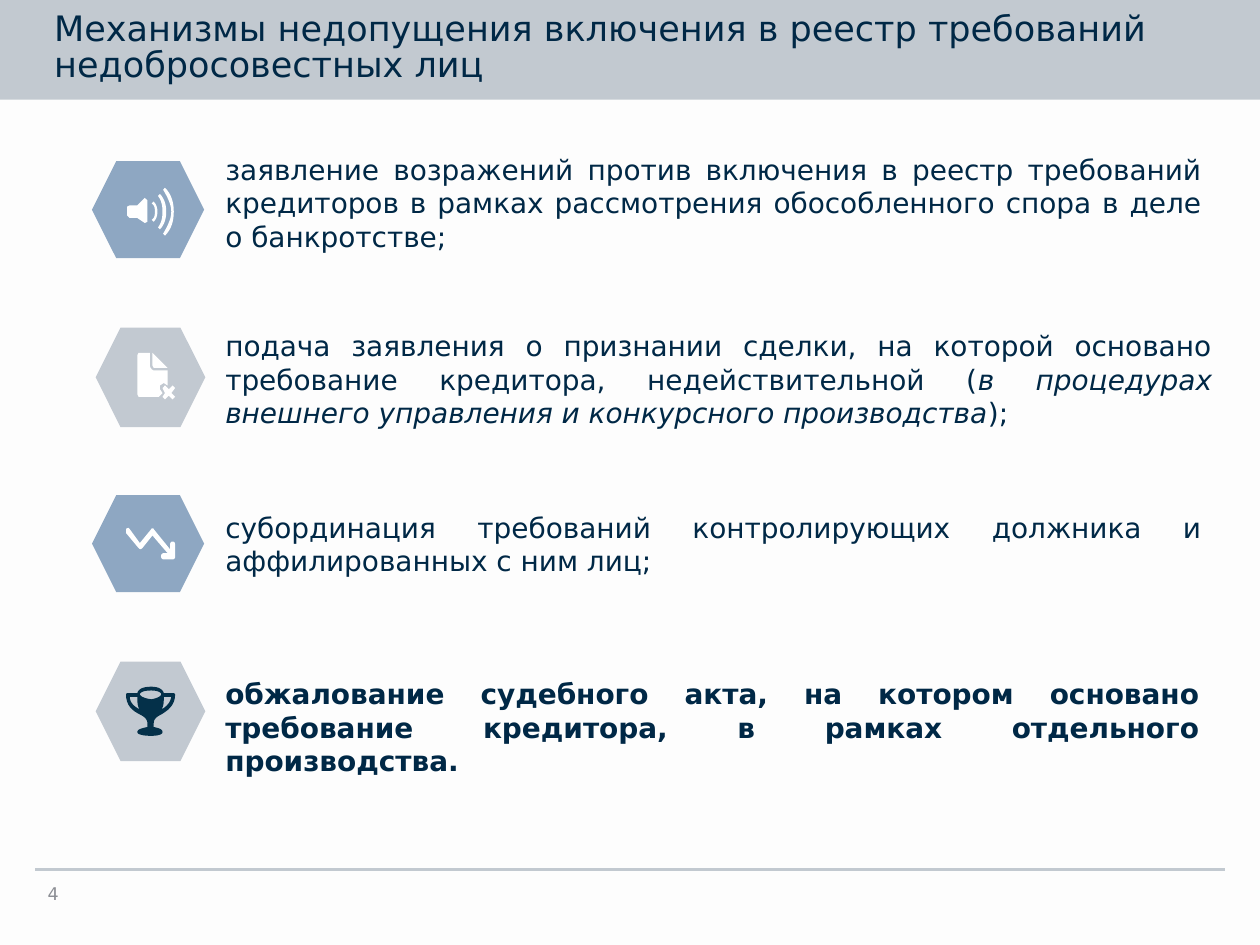
from dataclasses import dataclass

from lxml import etree
from pptx import Presentation
from pptx.dml.color import RGBColor
from pptx.enum.shapes import MSO_CONNECTOR, MSO_SHAPE
from pptx.enum.text import MSO_ANCHOR, MSO_AUTO_SIZE, PP_ALIGN
from pptx.oxml.ns import qn
from pptx.util import Inches, Pt

HEXAGON, RECTANGLE = MSO_SHAPE.HEXAGON, MSO_SHAPE.RECTANGLE
STRAIGHT = MSO_CONNECTOR.STRAIGHT
MIDDLE, TOP = MSO_ANCHOR.MIDDLE, MSO_ANCHOR.TOP
JUSTIFY, LEFT = PP_ALIGN.JUSTIFY, PP_ALIGN.LEFT
GROW = MSO_AUTO_SIZE.SHAPE_TO_FIT_TEXT

FONT = "DejaVu Sans"
COLORS = {
    "background": "FDFDFD", "band": "C2C9D0", "navy": "002846", "number": "8C8E94",
    "blue": "8EA7C2", "gray": "C2C9D1", "white": "FFFFFF", "cup": "043049",
}
CURVE_STEPS = 8

# A contour lists points (x, y) and cubic curves (x1, y1, x2, y2, x, y), in inches
Contour = list[tuple[float, ...]]


@dataclass
class Run:
    text: str
    bold: bool = False
    italic: bool = False


@dataclass
class Item:
    runs: list[Run]
    text_top: float
    text_width: float
    text_height: float
    hexagon: tuple[float, float, float, float]
    hexagon_color: str
    icon: list[Contour]
    icon_color: str = "white"


def rgb(name: str) -> RGBColor:
    return RGBColor.from_string(COLORS[name])


def style_shape(shape, color: str) -> None:
    shape.shadow.inherit = False
    shape.fill.solid()
    shape.fill.fore_color.rgb = rgb(color)
    shape.line.fill.background()


def add_filled_shape(slide, kind, box: tuple[float, ...], color: str) -> None:
    style_shape(slide.shapes.add_shape(kind, *map(Inches, box)), color)


def add_text(slide, box: tuple[float, ...], runs: list[Run], size: int,
             color: str = "navy", anchor=TOP, alignment=LEFT):
    shape = slide.shapes.add_textbox(*map(Inches, box))
    frame = shape.text_frame
    frame.word_wrap = True
    frame.vertical_anchor = anchor
    paragraph = frame.paragraphs[0]
    paragraph.alignment = alignment
    for part in runs:
        run = paragraph.add_run()
        run.text = part.text
        run.font.name, run.font.size = FONT, Pt(size)
        run.font.bold, run.font.italic = part.bold, part.italic
        run.font.color.rgb = rgb(color)
    return frame


def flatten(contour: Contour) -> list[tuple[int, int]]:
    """Turn the curves of a contour into short straight steps."""
    points = [contour[0]]
    for segment in contour[1:]:
        if len(segment) == 2:
            points.append(segment)
            continue
        x0, y0 = points[-1]
        x1, y1, x2, y2, x3, y3 = segment
        for step in range(1, CURVE_STEPS + 1):
            t = step / CURVE_STEPS
            a, b, c, d = (1 - t) ** 3, 3 * t * (1 - t) ** 2, 3 * t * t * (1 - t), t ** 3
            points.append((a * x0 + b * x1 + c * x2 + d * x3,
                           a * y0 + b * y1 + c * y2 + d * y3))
    return [(Inches(x), Inches(y)) for x, y in points]


def add_icon(slide, contours: list[Contour], color: str) -> None:
    outlines = [flatten(contour) for contour in contours]
    builder = slide.shapes.build_freeform(*outlines[0][0])
    for index, points in enumerate(outlines):
        if index:
            builder.move_to(*points[0])
        builder.add_line_segments(points[1:], close=True)
    style_shape(builder.convert_to_shape(), color)


def sound_wave(left: float, half: float, bulge: float, thickness: float) -> Contour:
    """Crescent around the speaker axis, thickness measured at its crest."""
    axis, tip = 1.68, 0.015
    right = left + bulge
    inner = right - thickness
    return [
        (left, axis - half),
        (left + bulge * 0.7, axis - half * 0.75, right, axis - half * 0.4, right, axis),
        (right, axis + half * 0.4, left + bulge * 0.7, axis + half * 0.75, left, axis + half),
        (left - tip, axis + half - tip),
        (left + bulge * 0.3, axis + half * 0.6, inner, axis + half * 0.3, inner, axis),
        (inner, axis - half * 0.3, left + bulge * 0.3, axis - half * 0.6,
         left - tip, axis - half + tip),
    ]


SPEAKER: list[Contour] = [
    [(1.01, 1.64), (1.03, 1.63), (1.09, 1.63), (1.15, 1.57), (1.17, 1.59),
     (1.17, 1.76), (1.15, 1.77), (1.09, 1.73), (1.03, 1.73), (1.01, 1.71)],
    sound_wave(1.31, 0.19, 0.07, 0.02),
    sound_wave(1.27, 0.14, 0.05, 0.03),
    sound_wave(1.22, 0.08, 0.03, 0.02),
]
REJECTED_PAGE: list[Contour] = [
    # Page, folded corner, cross
    [(1.1, 2.8), (1.19, 2.8), (1.19, 2.9), (1.19, 2.92, 1.21, 2.94, 1.22, 2.94),
     (1.33, 2.94), (1.33, 3.06), (1.3, 3.04), (1.27, 3.06), (1.27, 3.09),
     (1.29, 3.12), (1.27, 3.14), (1.26, 3.15), (1.1, 3.15), (1.09, 3.13), (1.09, 2.82)],
    [(1.21, 2.8), (1.33, 2.92), (1.22, 2.92), (1.21, 2.9)],
    [(1.34, 3.09), (1.37, 3.06), (1.39, 3.08), (1.36, 3.12), (1.39, 3.15), (1.37, 3.17),
     (1.34, 3.14), (1.31, 3.17), (1.29, 3.15), (1.31, 3.12), (1.29, 3.08), (1.31, 3.06)],
]
FALLING_TREND: list[Contour] = [
    [(1, 4.21), (1, 4.2, 1, 4.19, 1.02, 4.19), (1.03, 4.2), (1.11, 4.31), (1.2, 4.2),
     (1.2, 4.19, 1.22, 4.19, 1.22, 4.2), (1.35, 4.36), (1.35, 4.32),
     (1.35, 4.29, 1.39, 4.29, 1.39, 4.32), (1.39, 4.42), (1.39, 4.43, 1.38, 4.44, 1.37, 4.44),
     (1.3, 4.44), (1.27, 4.44, 1.27, 4.39, 1.3, 4.39), (1.33, 4.39), (1.21, 4.25),
     (1.13, 4.35), (1.12, 4.36, 1.11, 4.36, 1.1, 4.35), (1, 4.23)],
]
CUP: list[Contour] = [
    # Outline, right handle, mouth, left handle
    [(1.22, 5.74), (1.22, 5.71, 1.24, 5.69, 1.28, 5.67), (1.33, 5.64, 1.39, 5.6, 1.39, 5.51),
     (1.38, 5.5), (1.3, 5.5), (1.29, 5.47, 1.26, 5.45, 1.2, 5.45),
     (1.13, 5.45, 1.1, 5.47, 1.09, 5.5), (1.01, 5.5), (1, 5.51),
     (1, 5.6, 1.05, 5.64, 1.11, 5.67), (1.15, 5.69, 1.17, 5.71, 1.17, 5.74), (1.17, 5.77),
     (1.12, 5.78, 1.09, 5.79, 1.09, 5.81), (1.09, 5.83, 1.14, 5.84, 1.2, 5.84),
     (1.25, 5.84, 1.29, 5.83, 1.29, 5.81), (1.29, 5.79, 1.27, 5.78, 1.22, 5.77)],
    [(1.28, 5.63), (1.3, 5.61, 1.3, 5.57, 1.3, 5.53), (1.36, 5.53),
     (1.35, 5.58, 1.32, 5.61, 1.28, 5.63)],
    [(1.2, 5.48), (1.26, 5.48, 1.28, 5.5, 1.28, 5.51), (1.28, 5.52, 1.26, 5.54, 1.2, 5.55),
     (1.13, 5.54, 1.11, 5.52, 1.11, 5.51), (1.11, 5.5, 1.13, 5.48, 1.2, 5.48)],
    [(1.03, 5.53), (1.09, 5.53), (1.09, 5.57, 1.09, 5.61, 1.11, 5.63),
     (1.07, 5.61, 1.03, 5.58, 1.03, 5.53)],
]

ITEMS = [
    Item([Run("заявление возражений против включения в реестр требований кредиторов "
              "в рамках рассмотрения обособленного спора в деле о банкротстве;")],
         1.16, 7.95, 0.91, (0.73, 1.28, 0.89, 0.77), "blue", SPEAKER),
    Item([Run("подача заявления о признании сделки, на которой основано требование "
              "кредитора, недействительной ("),
          Run("в процедурах внешнего управления и конкурсного производства", italic=True),
          Run(");")],
         2.56, 8.03, 0.91, (0.76, 2.6, 0.87, 0.79), "gray", REJECTED_PAGE),
    Item([Run("субординация требований контролирующих должника и аффилированных с ним лиц;")],
         4, 7.95, 0.64, (0.73, 3.93, 0.89, 0.77), "blue", FALLING_TREND),
    Item([Run("обжалование судебного акта, на котором основано требование кредитора, "
              "в рамках отдельного производства.", bold=True)],
         5.32, 7.93, 0.64, (0.76, 5.25, 0.87, 0.79), "gray", CUP, "cup"),
]


def main() -> None:
    presentation = Presentation()
    presentation.slide_width, presentation.slide_height = Inches(10), Inches(7.5)
    slide = presentation.slides.add_slide(presentation.slide_layouts[6])
    slide.background.fill.solid()
    slide.background.fill.fore_color.rgb = rgb("background")

    # Title band
    add_filled_shape(slide, RECTANGLE, (0, 0, 10, 0.79), "band")
    title = add_text(slide, (0, -0.01, 10, 0.79),
                     [Run("Механизмы недопущения включения в реестр требований "
                          "недобросовестных лиц")], 20, anchor=MIDDLE)
    title.margin_left = Inches(0.43)
    title.margin_right = title.margin_top = title.margin_bottom = Inches(0.04)
    title.paragraphs[0].line_spacing = 0.85

    # Footer rule and slide number
    rule = slide.shapes.add_connector(STRAIGHT, Inches(0.28), Inches(6.9),
                                      Inches(9.72), Inches(6.9))
    rule.line.color.rgb = rgb("band")
    rule.line.width = Pt(1.5)
    etree.SubElement(rule._element.spPr, qn("a:effectLst"))
    add_text(slide, (0.28, 6.96, 1.26, 0.26), [Run("4")], 10, "number", MIDDLE)

    # Mechanisms
    for item in ITEMS:
        add_filled_shape(slide, HEXAGON, item.hexagon, item.hexagon_color)
        add_icon(slide, item.icon, item.icon_color)
        frame = add_text(slide, (1.69, item.text_top, item.text_width, item.text_height),
                         item.runs, 16, alignment=JUSTIFY)
        frame.auto_size = GROW

    presentation.save("out.pptx")


if __name__ == "__main__":
    main()
